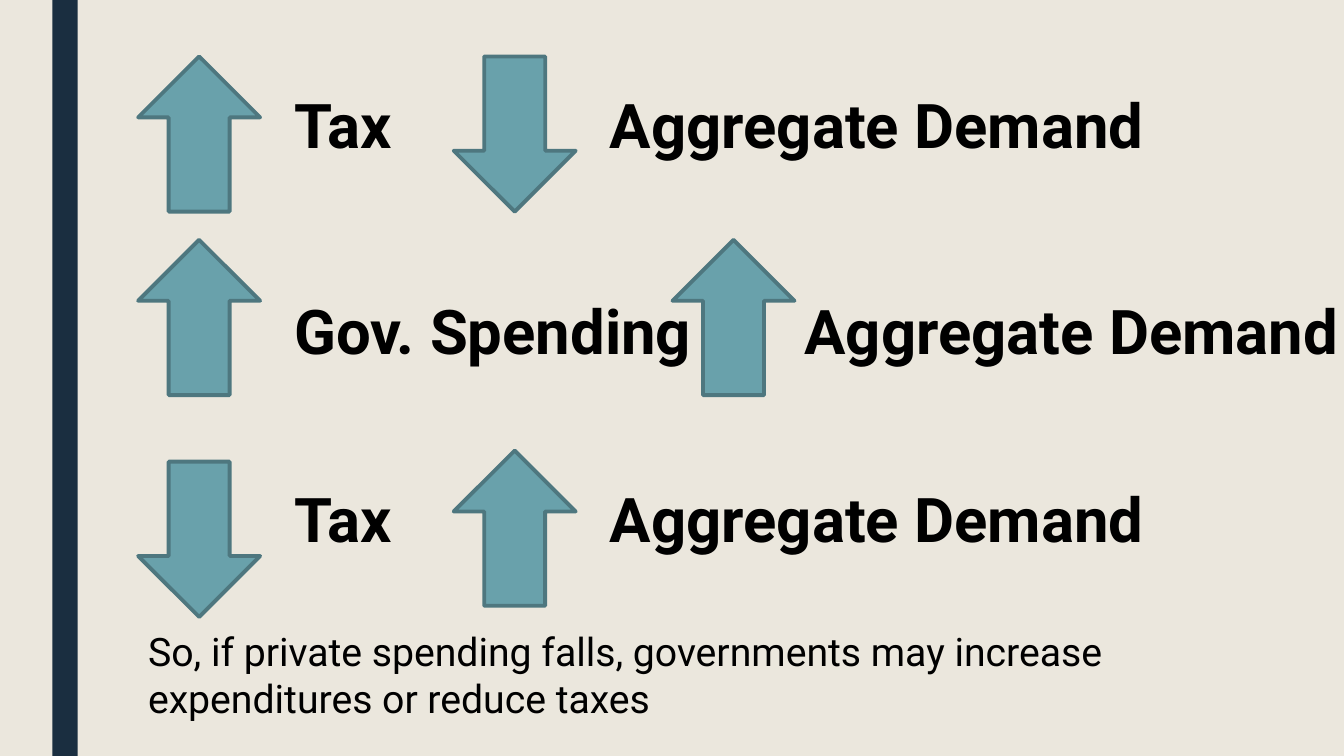
import pptx
import pptx.util
from lxml import etree
from pptx.dml.color import RGBColor
from pptx.enum.shapes import MSO_SHAPE
from pptx.enum.text import MSO_AUTO_SIZE
from pptx.oxml.ns import qn
from pptx.util import Inches

CREAM = RGBColor(0xEB, 0xE7, 0xDD)
NAVY = RGBColor(0x1A, 0x2E, 0x40)
TEAL = RGBColor(0x69, 0xA1, 0xAB)
DARK_TEAL = RGBColor(0x4E, 0x77, 0x7F)
BLACK = RGBColor(0, 0, 0)

UP, DOWN = 0, 180
CAUSE_LEFT = 1.37
CAUSE_TEXT_LEFT = 2.82

ROWS = [
    (0.81, ("Tax", 1.45), (UP, 0.56), (DOWN, 4.5, 0.56), 5.95),
    (2.86, ("Gov. Spending", 6.48), (UP, 2.38), (UP, 6.67, 2.38), 7.88),
    (4.72, ("Tax", 1.45), (DOWN, 4.58), (UP, 4.5, 4.47), 5.95),
]


class SlideBuilder:
    font = "Roboto"

    def __init__(self, prs):
        self.s = prs.slides.add_slide(prs.slide_layouts[6])
        self.s.background.fill.solid()
        self.s.background.fill.fore_color.rgb = CREAM

    def shape(self, kind, left, top, width, height, color):
        sp = self.s.shapes.add_shape(
            kind, Inches(left), Inches(top), Inches(width), Inches(height))
        sp.shadow.inherit = False
        sp.fill.solid()
        sp.fill.fore_color.rgb = color
        sp.line.fill.background()
        return sp

    def arrow(self, rotation, left, top):
        sp = self.shape(MSO_SHAPE.UP_ARROW, left, top, 1.21, 1.54, TEAL)
        sp.rotation = rotation
        sp.line.color.rgb = DARK_TEAL
        sp.line.width = pptx.util.Pt(2.75)
        etree.SubElement(sp.element.spPr.find(qn("a:ln")), qn("a:round"))

    def text(self, text, left, top, width, height=0.84, size=44, bold=True):
        tf = self.s.shapes.add_textbox(
            Inches(left), Inches(top), Inches(width), Inches(height)).text_frame
        tf.word_wrap = True
        tf.auto_size = MSO_AUTO_SIZE.SHAPE_TO_FIT_TEXT
        tf.text = text
        r = tf.paragraphs[0].runs[0]
        r.font.name = self.font
        r.font.size = pptx.util.Pt(size)
        r.font.bold = bold
        r.font.color.rgb = BLACK


def main():
    prs = pptx.Presentation()
    prs.slide_width = Inches(13.33)
    prs.slide_height = Inches(7.5)
    slide = SlideBuilder(prs)
    slide.shape(MSO_SHAPE.RECTANGLE, 0.52, 0, 0.25, 7.5, NAVY)
    for text_top, (cause, cause_width), (turn, top), effect, effect_left in ROWS:
        slide.arrow(turn, CAUSE_LEFT, top)
        slide.text(cause, CAUSE_TEXT_LEFT, text_top, cause_width)
        slide.arrow(*effect)
        slide.text("Aggregate Demand", effect_left, text_top, 5.89)
    slide.text(
        "So, if private spending falls, governments may increase "
        "expenditures or reduce taxes",
        CAUSE_LEFT, 6.17, 10.95, 1.04, size=28, bold=False)
    prs.save("out.pptx")


if __name__ == "__main__":
    main()
